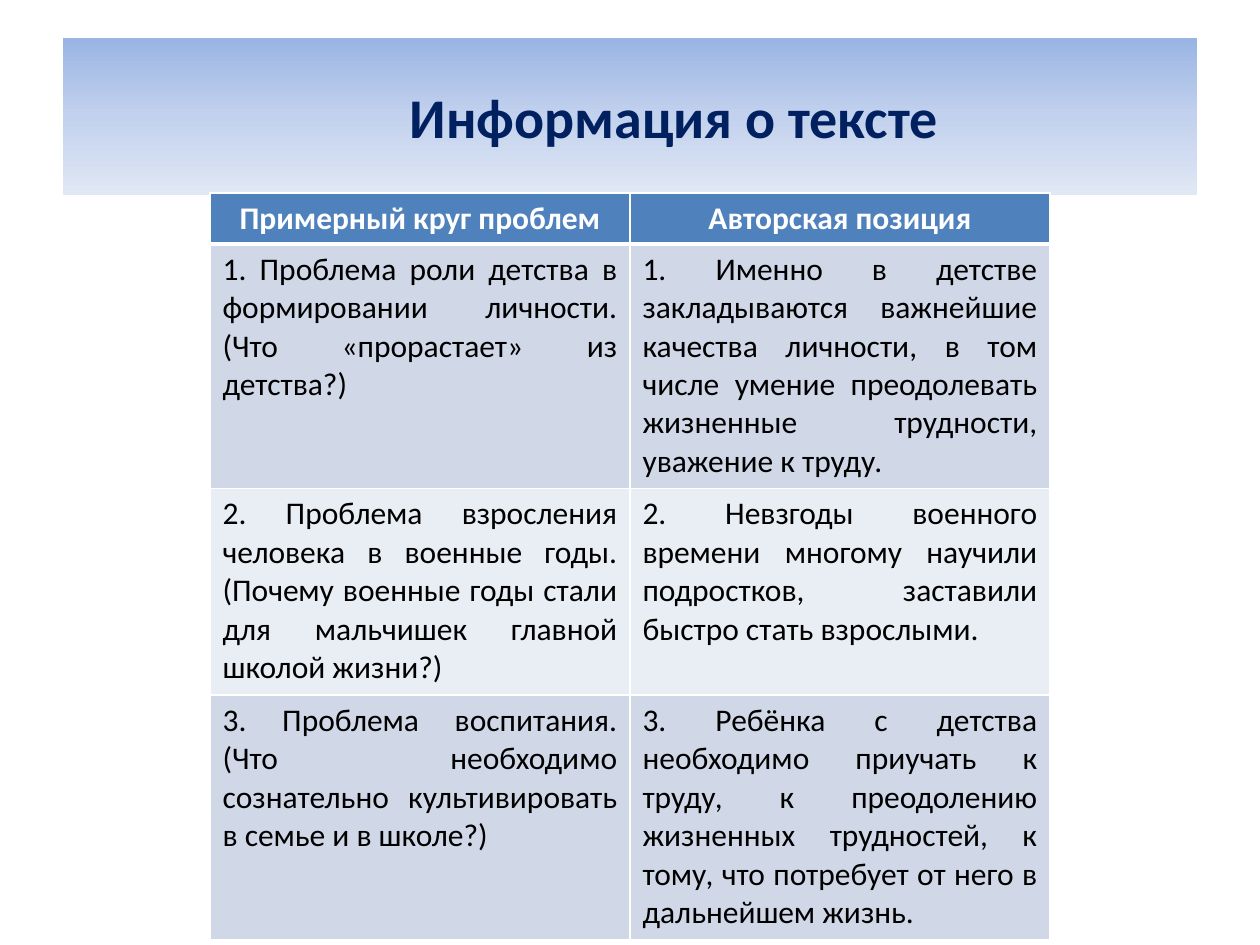
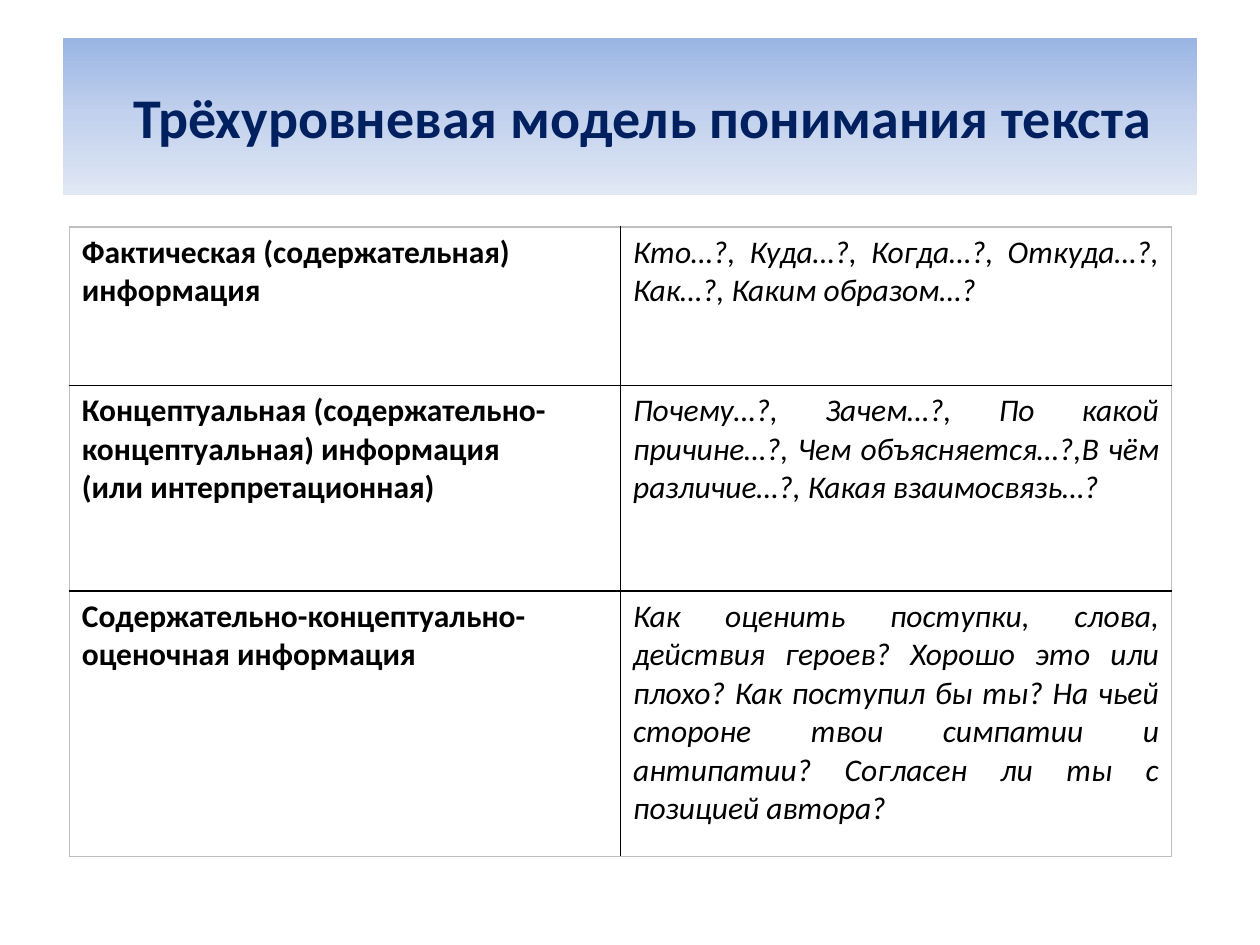
from copy import deepcopy
from dataclasses import dataclass

from lxml import etree
from pptx import Presentation
from pptx import util as u
from pptx.dml import color
from pptx.enum import shapes, text
from pptx.oxml import ns


@dataclass(frozen=True)
class Theme:
    face: str = "Calibri"
    navy: str = "002060"
    black: str = "000000"
    white: str = "FFFFFF"
    head: str = "4F81BD"
    grey: str = "BFBFBF"
    bands: tuple = ("D0D8E8", "E9EDF4")
    fade: tuple = ("9AB5E4", "C2D1ED", "E1E8F5")
    title: int = 32
    body: int = 18


JUST = text.PP_ALIGN.JUSTIFY
MID = text.PP_ALIGN.CENTER
LEFT = text.PP_ALIGN.LEFT


def put(item, **values):
    for name, value in values.items():
        setattr(item, name, value)


def rgb(code):
    return color.RGBColor.from_string(code)


class Deck:
    def __init__(self, theme):
        self.theme = theme
        self.show = Presentation()
        put(self.show, slide_width=u.Inches(10), slide_height=u.Inches(7.5))
        self.page = None

    def wide(self, share):
        return round(self.show.slide_width * share)

    def tall(self, share):
        return round(self.show.slide_height * share)

    def place(self, left, top, width, height):
        return self.wide(left), self.tall(top), self.wide(width), self.tall(height)

    def add_page(self, title, shift):
        self.page = self.show.slides.add_slide(self.show.slide_layouts[6])
        band = self.page.shapes.add_shape(
            shapes.MSO_SHAPE.RECTANGLE, *self.place(0.05, 0.04, 0.9, 1 / 6))
        band.shadow.inherit = False
        band.line.fill.background()
        band.fill.gradient()
        band.fill.gradient_angle = 270
        stops = band._element.xpath(".//a:gsLst")[0]
        stops.insert(1, deepcopy(stops[0]))
        for stop, code, spot in zip(band.fill.gradient_stops, self.theme.fade, (0, 0.5, 1)):
            stop.color.rgb = rgb(code)
            stop.position = spot
        put(band.text_frame, word_wrap=True, margin_left=self.wide(0.01 + shift),
            vertical_anchor=text.MSO_ANCHOR.MIDDLE)
        self.say(band.text_frame, title, self.theme.navy, MID,
                 size=u.Pt(self.theme.title), bold=True)

    def say(self, frame, words, ink, align, **look):
        frame.text = words
        for para in frame.paragraphs:
            para.alignment = align
            for run in para.runs:
                put(run.font, name=self.theme.face, **look)
                run.font.color.rgb = rgb(ink)

    def add_grid(self, box, rows, shares):
        frame = self.page.shapes.add_table(len(rows), len(rows[0]), *self.place(*box))
        grid = frame.table
        put(grid, first_row=False, horz_banding=False)
        for row, share in zip(grid.rows, shares):
            row.height = self.tall(box[3] * share / sum(shares))
        return grid

    def fill(self, cell, code):
        cell.fill.solid()
        cell.fill.fore_color.rgb = rgb(code)

    def edge(self, cell, sides):
        props = cell._tc.get_or_add_tcPr()
        for spot, side in enumerate("LRTB"):
            code, width = sides[side]
            line = etree.Element(ns.qn(f"a:ln{side}"), w=str(u.Pt(width)))
            paint = etree.SubElement(line, ns.qn("a:solidFill"))
            etree.SubElement(paint, ns.qn("a:srgbClr"), val=code)
            props.insert(spot, line)

    def stop_at(self, cell, share):
        for para in cell.text_frame.paragraphs:
            tabs = etree.SubElement(para._p.get_or_add_pPr(), ns.qn("a:tabLst"))
            etree.SubElement(tabs, ns.qn("a:tab"), pos=str(self.wide(share)), algn="r")

    def band_grid(self, box, rows, shares):
        look = self.theme
        grid = self.add_grid(box, rows, shares)
        grid.first_row = True
        for r, row in enumerate(rows):
            for c, words in enumerate(row):
                cell = grid.cell(r, c)
                top = r == 0
                self.say(cell.text_frame, words, look.white if top else look.black,
                         MID if top else JUST, size=u.Pt(look.body), bold=top)
                self.fill(cell, look.head if top else look.bands[(r - 1) % 2])
                sides = dict.fromkeys("LRTB", (look.white, 1))
                if r < 2:
                    sides["B" if top else "T"] = (look.white, 3)
                self.edge(cell, sides)

    def line_grid(self, box, rows, shares):
        look = self.theme
        grid = self.add_grid(box, rows, shares)
        for r, row in enumerate(rows):
            for c, words in enumerate(row):
                cell = grid.cell(r, c)
                term = c == 0
                self.say(cell.text_frame, words, look.black, LEFT if term else JUST,
                         size=u.Pt(look.body), bold=term, italic=not term)
                if "\t" in words:
                    self.stop_at(cell, 0.41)
                cell.fill.background()
                rim = {"L": c == 0, "R": c == len(row) - 1,
                       "T": r == 0, "B": r == len(rows) - 1}
                self.edge(cell, {side: (look.grey if out else look.black, 1)
                                 for side, out in rim.items()})


THEMES = (
    ("Примерный круг проблем", "Авторская позиция"),
    ("1. Проблема роли детства в формировании личности. (Что «прорастает» из детства?)",
     "1. Именно в детстве закладываются важнейшие качества личности, в том числе "
     "умение преодолевать жизненные трудности, уважение к труду."),
    ("2. Проблема взросления человека в военные годы. (Почему военные годы стали "
     "для мальчишек главной школой жизни?)",
     "2. Невзгоды военного времени многому научили подростков, заставили быстро "
     "стать взрослыми."),
    ("3. Проблема воспитания. (Что необходимо сознательно культивировать в семье и в школе?)",
     "3. Ребёнка с детства необходимо приучать к труду, к преодолению жизненных "
     "трудностей, к тому, что потребует от него в дальнейшем жизнь."),
)

LEVELS = (
    ("Фактическая (содержательная) информация",
     "Кто…?, Куда…?, Когда…?, Откуда…?, Как…?, Каким образом…?"),
    ("Концептуальная (содержательно-концептуальная) информация\n(или интерпретационная)",
     "Почему…?, Зачем…?, По какой причине…?, Чем объясняется…?,\tВ чём различие…?, "
     "Какая взаимосвязь…?"),
    ("Содержательно-концептуально-оценочная информация",
     "Как оценить поступки, слова, действия героев? Хорошо это или плохо? Как "
     "поступил бы ты? На чьей стороне твои симпатии и антипатии? Согласен ли ты "
     "с позицией автора?"),
)


def main():
    deck = Deck(Theme())
    deck.add_page("Информация о тексте", 0.07)
    deck.band_grid((1 / 6, 1.53 / 7.5, 2 / 3, 0.79), THEMES, (0.4, 1.93, 1.63, 1.93))
    deck.add_page("Трёхуровневая модель понимания текста", 0.02)
    deck.line_grid((0.55 / 10, 0.24, 7 / 8, 2 / 3), LEVELS, (1.26, 1.63, 2.11))
    deck.show.save("out.pptx")


if __name__ == "__main__":
    main()
